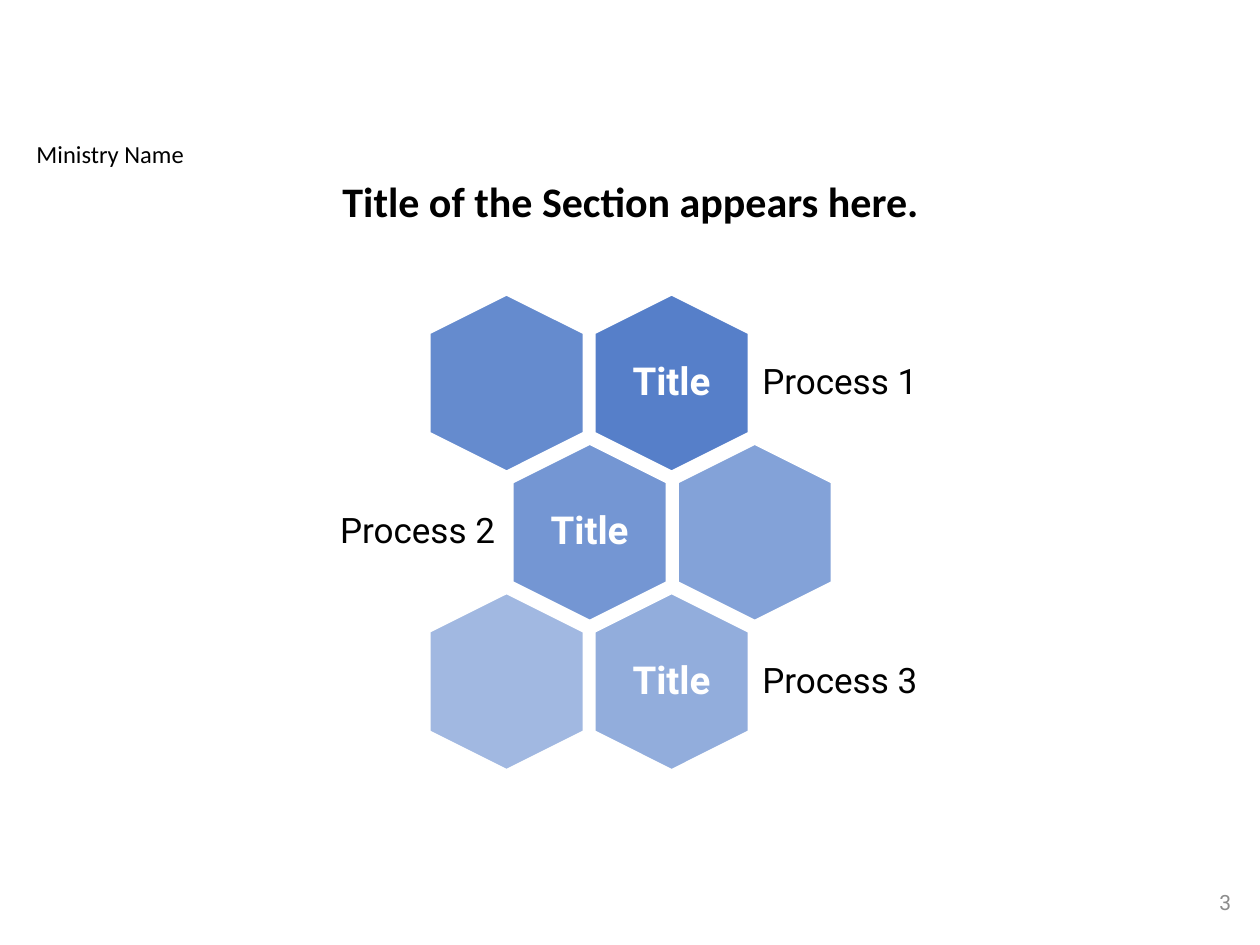
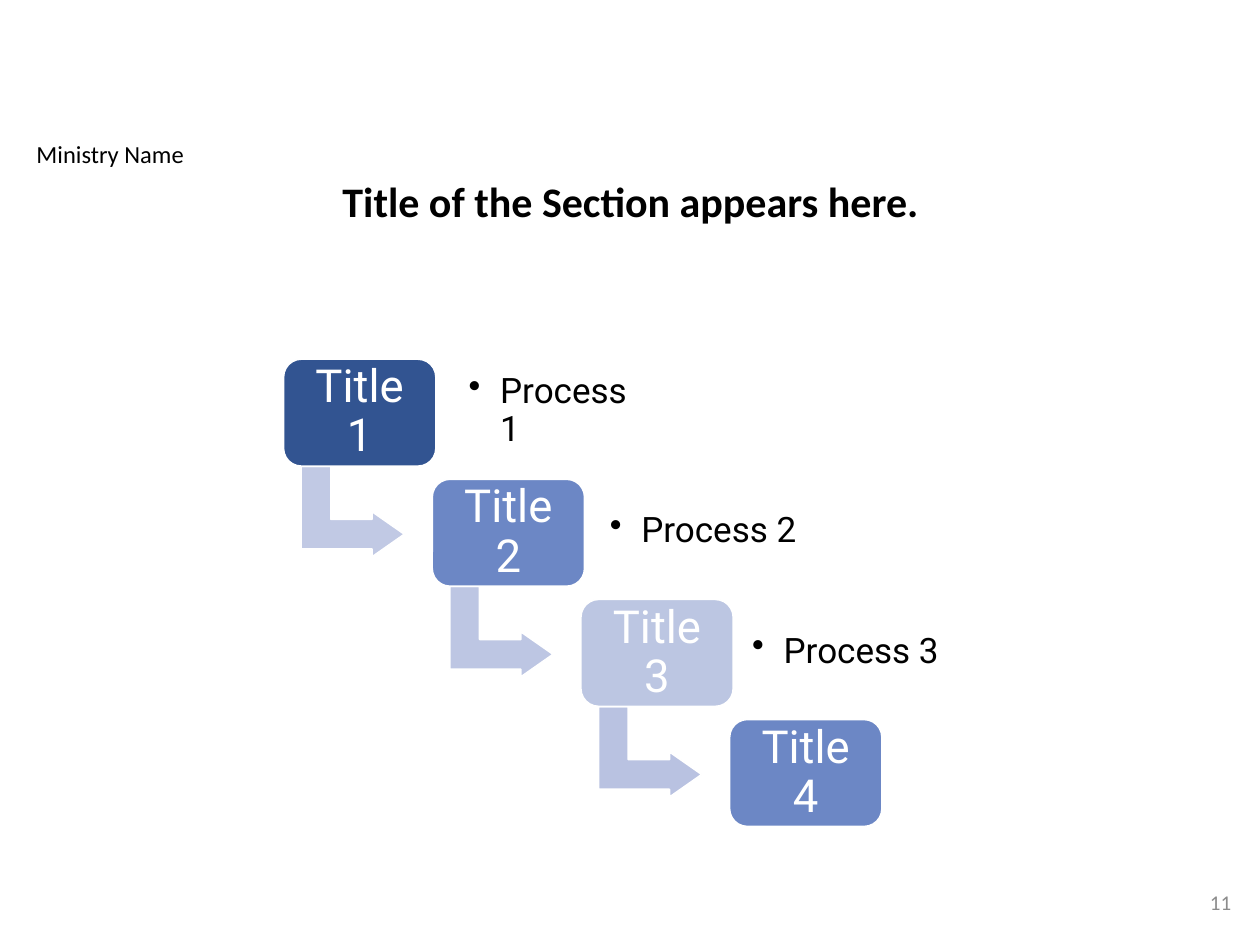
from lxml import etree
from pptx import Presentation
from pptx.dml.color import RGBColor
from pptx.enum.shapes import MSO_SHAPE
from pptx.enum.text import MSO_ANCHOR, PP_ALIGN
from pptx.oxml.ns import qn
from pptx.util import Inches, Pt

HEXAGON = MSO_SHAPE.HEXAGON
ROUNDED = MSO_SHAPE.ROUNDED_RECTANGLE
BENT_ARROW = MSO_SHAPE.BENT_UP_ARROW
TOP, MIDDLE = MSO_ANCHOR.TOP, MSO_ANCHOR.MIDDLE
LEFT, CENTER, RIGHT = PP_ALIGN.LEFT, PP_ALIGN.CENTER, PP_ALIGN.RIGHT

COLORS = {
    "black": "000000",
    "white": "FFFFFF",
    "page_number": "8C8C8C",
    "hexagon": "4472C4",
    "dark_step": "325491",
    "mid_step": "6C87C5",
    "light_step": "BCC6E2",
    "arrow_1": "C1C9E4",
    "arrow_2": "BDC6E3",
    "arrow_3": "B9C2E1",
}
HEADING_FONT = "Calibri"
BODY_FONT = "Roboto"

HEXAGON_ROWS = [
    (0, [(1, "Title"), (0, None)], "Process 1"),
    (0.66, [(0, "Title"), (1, None)], "Process 2"),
    (0, [(1, "Title"), (0, None)], "Process 3"),
]
PROCESS_BOXES = [(5.97, 1.56, LEFT), (2.5, 1.51, RIGHT), (5.97, 1.56, LEFT)]

STEPS = [
    ("Title 1", "dark_step", "arrow_1", "Process 1", 3.61, 1.6),
    ("Title 2", "mid_step", "arrow_2", "Process 2", 4.73, 2.35),
    ("Title 3", "light_step", "arrow_3", "Process 3", 5.86, 1.97),
    ("Title 4", "mid_step", None, None, None, None),
]


def color(name):
    return RGBColor.from_string(COLORS[name])


def write(shape, text, size, font=BODY_FONT, ink="black", bold=False,
          align=LEFT, anchor=MIDDLE, inset=0.1, spacing=0.9, bullet=False):
    frame = shape.text_frame
    frame.word_wrap = True
    frame.vertical_anchor = anchor
    frame.margin_left = frame.margin_right = Inches(inset)
    frame.margin_top = frame.margin_bottom = Inches(min(inset, 0.05) if inset == 0.1 else inset)
    frame.text = text
    para = frame.paragraphs[0]
    para.alignment = align
    para.line_spacing = spacing
    if bullet:
        add_bullet(para)
    span = para.runs[0].font
    span.name, span.size, span.bold = font, Pt(size), bold
    span.color.rgb = color(ink)


def add_bullet(para):
    properties = para._p.get_or_add_pPr()
    properties.set("marL", str(Inches(0.25)))
    properties.set("indent", str(-Inches(0.25)))
    etree.SubElement(properties, qn("a:buChar")).set("char", "•")


def add_text(page, area, text, size, **style):
    box = page.shapes.add_textbox(*map(Inches, area))
    write(box, text, size, **style)


def add_block(page, kind, area, fill, adjustments, rotation=0, opacity=None):
    block = page.shapes.add_shape(kind, *map(Inches, area))
    block.shadow.inherit = False
    block.rotation = rotation
    for index, value in enumerate(adjustments):
        block.adjustments[index] = value
    block.fill.solid()
    block.fill.fore_color.rgb = color(fill)
    block.line.color.rgb = color("white")
    block.line.width = Pt(1)
    if opacity is not None:
        tint = block.fill._xPr.find(qn("a:solidFill"))[0]
        etree.SubElement(tint, qn("a:alpha")).set("val", str(opacity * 1000))
    return block


def add_page(deck, number, number_font):
    page = deck.slides.add_slide(deck.slide_layouts[6])
    add_text(page, (7.62, 6.96, 2.25, 0.4), number, 12, font=number_font,
             ink="page_number", align=RIGHT, spacing=1.0)
    add_text(page, (2.09, 1.39, 5.83, 0.79), "Title of the Section appears here.",
             24, font=HEADING_FONT, bold=True, align=CENTER, anchor=TOP)
    add_text(page, (-0.03, 1.08, 1.81, 0.65), "Ministry Name",
             14, font=HEADING_FONT, align=CENTER, anchor=TOP)
    return page


def add_honeycomb(page):
    left, top, column_step, row_step = 3.32, 2.43, 1.31, (4.8 - 2.43) / 2
    opacity = 90
    for row, (shift, cells, process) in enumerate(HEXAGON_ROWS):
        y = top + row * row_step
        for column, title in cells:
            x = left + shift + column * column_step
            add_block(page, HEXAGON, (x, y, 1.4, 1.22), "hexagon", [0.25],
                      rotation=90, opacity=opacity)
            opacity -= 8
            if title:
                add_text(page, (x + 0.28, y + 0.13, 0.84, 0.96), title, 22,
                         ink="white", bold=True, align=CENTER, inset=0.09)
        box_left, width, align = PROCESS_BOXES[row]
        add_text(page, (box_left, y + 0.19, width, 0.84), process, 20,
                 align=align, inset=0.08)


def add_staircase(page):
    left, top, step_right, step_down = 2.25, 2.85, 1.18, (5.71 - 2.85) / 3
    for index, (title, fill, arrow, process, text_left, width) in enumerate(STEPS):
        x, y = left + index * step_right, top + index * step_down
        if arrow:
            add_block(page, BENT_ARROW, (x + 0.19, y + 0.8, 0.72, 0.82), arrow,
                      [0.328, 0.25, 0.358], rotation=90)
        block = add_block(page, ROUNDED, (x, y, 1.21, 0.85), fill, [0.167])
        write(block, title, 26, ink="white", align=CENTER, inset=0.11)
        if process:
            add_text(page, (text_left, y + 0.07, width, 0.69), process, 20,
                     inset=0.11, bullet=True)


def main():
    deck = Presentation()
    deck.slide_width, deck.slide_height = Inches(10), Inches(7.5)
    add_honeycomb(add_page(deck, "3", BODY_FONT))
    add_staircase(add_page(deck, "11", HEADING_FONT))
    deck.save("out.pptx")


if __name__ == "__main__":
    main()
